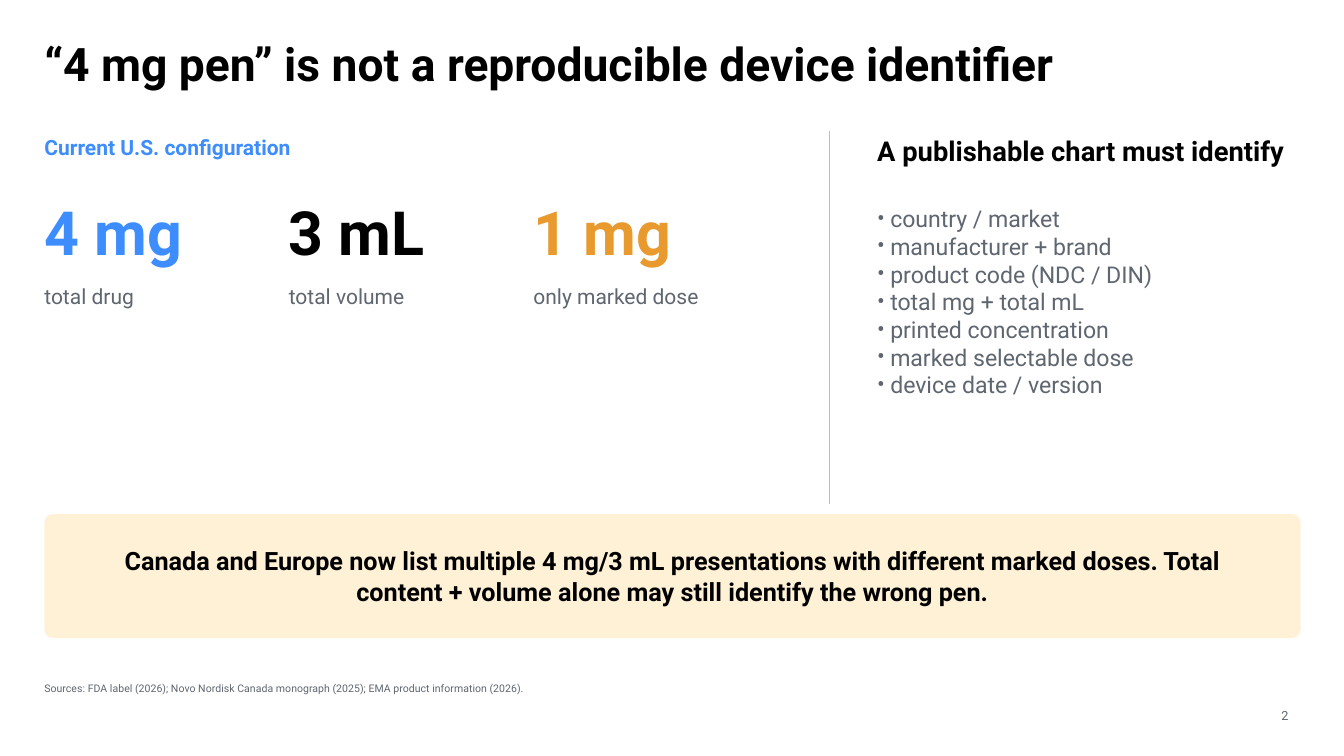
from lxml import etree
from pptx import Presentation
from pptx.dml.color import RGBColor
from pptx.enum.shapes import MSO_CONNECTOR, MSO_SHAPE
from pptx.enum.text import MSO_ANCHOR as Anchor, MSO_AUTO_SIZE, PP_ALIGN as Align
from pptx.oxml.ns import qn
from pptx.util import Inches, Pt

FONT = "Roboto"
WHITE = RGBColor(0xFF, 0xFF, 0xFF)
BLACK = RGBColor(0x00, 0x00, 0x00)
BLUE = RGBColor(0x3D, 0x8D, 0xFF)
ORANGE = RGBColor(0xE9, 0x9A, 0x2F)
GREY = RGBColor(0x5F, 0x66, 0x70)
RULE_GREY = RGBColor(0xB8, 0xBC, 0xC4)
CREAM = RGBColor(0xFF, 0xF1, 0xD6)

LEFT = 0.44
CONTENT_WIDTH = 12.46
METRIC_STEP = 2.425
METRICS = [
    ("4 mg", "total drug", BLUE),
    ("3 mL", "total volume", BLACK),
    ("1 mg", "only marked dose", ORANGE),
]
REQUIREMENTS = [
    "country / market",
    "manufacturer + brand",
    "product code (NDC / DIN)",
    "total mg + total mL",
    "printed concentration",
    "marked selectable dose",
    "device date / version",
]
WARNING = (
    "Canada and Europe now list multiple 4 mg/3 mL presentations with different "
    "marked doses. Total content + volume alone may still identify the wrong pen."
)
SOURCES = (
    "Sources: FDA label (2026); Novo Nordisk Canada monograph (2025); "
    "EMA product information (2026)."
)


def place(shape, left, top, width, height):
    shape.left, shape.top = Inches(left), Inches(top)
    shape.width, shape.height = Inches(width), Inches(height)


def write(shape, text, size, color, bold=False, align=Align.LEFT, anchor=Anchor.TOP, inset=0):
    frame = shape.text_frame
    frame.text = text
    frame.word_wrap = True
    frame.auto_size = MSO_AUTO_SIZE.NONE
    frame.vertical_anchor = anchor
    frame.margin_left = frame.margin_right = Inches(inset)
    frame.margin_top = frame.margin_bottom = 0
    for paragraph in frame.paragraphs:
        paragraph.alignment = align
        paragraph.space_before = Pt(0)
        for run in paragraph.runs:
            run.font.name = FONT
            run.font.size = Pt(size)
            run.font.bold = bold
            run.font.color.rgb = color


def add_label(slide, box, text, size, color, **style):
    label = slide.shapes.add_textbox(*map(Inches, box))
    write(label, text, size, color, **style)


def add_metric(slide, column, amount, caption, color):
    left = LEFT + column * METRIC_STEP
    add_label(slide, (left, 1.93, 2.29, 0.81), amount, 43.5, color, bold=True)
    add_label(slide, (left, 2.81, 2.29, 0.4), caption, 15, GREY)


def add_divider(slide, x, top, bottom):
    divider = slide.shapes.add_connector(
        MSO_CONNECTOR.STRAIGHT, Inches(x), Inches(top), Inches(x), Inches(bottom)
    )
    divider.line.color.rgb = RULE_GREY
    divider.line.width = Pt(1)
    etree.SubElement(divider._element.spPr, qn("a:effectLst"))


def add_callout(slide, box, text):
    callout = slide.shapes.add_shape(MSO_SHAPE.ROUNDED_RECTANGLE, *map(Inches, box))
    callout.adjustments[0] = 0.07
    callout.shadow.inherit = False
    callout.fill.solid()
    callout.fill.fore_color.rgb = CREAM
    callout.line.fill.background()
    write(callout, text, 18, BLACK, bold=True, align=Align.CENTER,
          anchor=Anchor.MIDDLE, inset=0.35)


def fill_checklist(body, items):
    place(body, 8.7, 2.03, 4.06, 2.97)
    write(body, "\n".join(items), 16.5, GREY)
    indent = Inches(0.13)
    for paragraph in body.text_frame.paragraphs:
        properties = paragraph._p.get_or_add_pPr()
        properties.set("marL", str(indent))
        properties.set("indent", str(-indent))
        etree.SubElement(properties, qn("a:buFont"), typeface=FONT)
        etree.SubElement(properties, qn("a:buChar"), char="•")


def main():
    deck = Presentation()
    deck.slide_width, deck.slide_height = Inches(13.33), Inches(7.5)
    slide = deck.slides.add_slide(deck.slide_layouts[1])
    slide.background.fill.solid()
    slide.background.fill.fore_color.rgb = WHITE

    title, checklist = slide.placeholders
    place(title, LEFT, 0.35, CONTENT_WIDTH, 0.96)
    write(title, "“4 mg pen” is not a reproducible device identifier", 33, BLACK, bold=True)

    add_label(slide, (LEFT, 1.33, 5.42, 0.38), "Current U.S. configuration", 15, BLUE, bold=True)
    for column, metric in enumerate(METRICS):
        add_metric(slide, column, *metric)

    add_divider(slide, 8.23, 1.3, 5)
    add_label(slide, (8.7, 1.33, 4.2, 0.44), "A publishable chart must identify",
              19.5, BLACK, bold=True)
    fill_checklist(checklist, REQUIREMENTS)

    add_callout(slide, (LEFT, 5.1, CONTENT_WIDTH, 1.23), WARNING)
    add_label(slide, (LEFT, 6.77, 11.67, 0.33), SOURCES, 7.5, GREY)
    add_label(slide, (12.34, 6.98, 0.44, 0.19), "2", 9, GREY,
              align=Align.RIGHT, anchor=Anchor.BOTTOM)

    deck.save("out.pptx")


if __name__ == "__main__":
    main()
